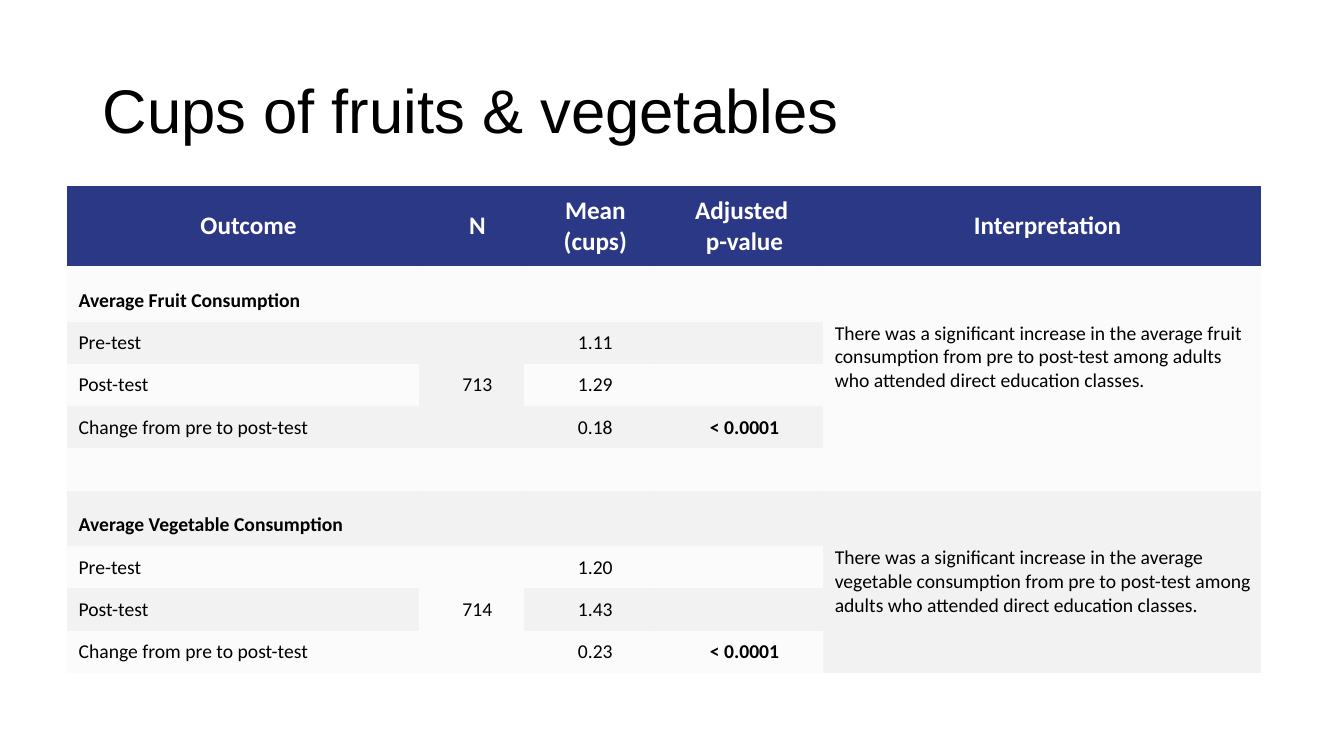
from pptx import Presentation
from pptx import util as u
from pptx.dml.color import RGBColor
from pptx.enum import text
from pptx.oxml import ns
from lxml import etree

BLACK = RGBColor(0, 0, 0)
WHITE = RGBColor(255, 255, 255)
NAVY = RGBColor(0x2B, 0x38, 0x85)
GREY = RGBColor(0xF2, 0xF2, 0xF2)
PALE_ALPHA = "30000"
NO_GRID_STYLE = "{2D5ABB26-0587-4C30-8999-92F81FD0307C}"

LEFT, CENTER = text.PP_ALIGN.LEFT, text.PP_ALIGN.CENTER
MIDDLE, BOTTOM = text.MSO_ANCHOR.MIDDLE, text.MSO_ANCHOR.BOTTOM

HEADINGS = ["Outcome", "N", "Mean (cups)", "Adjusted \np-value", "Interpretation"]
COLUMN_WIDTHS = [3.5, 1.04, 1.3, 1.66, 4.35]
HEADER_HEIGHT, SECTION_HEIGHT, ROW_HEIGHT = 0.79, 0.55, 0.42
ROW_HEIGHTS = [HEADER_HEIGHT, SECTION_HEIGHT] + [ROW_HEIGHT] * 4 + [SECTION_HEIGHT] + [ROW_HEIGHT] * 3
MEASURES = ["Pre-test", "Post-test", "Change from pre to post-test"]
SECTIONS = [
    (1, "Average Fruit Consumption", "713", ["1.11", "1.29", "0.18"],
     "There was a significant increase in the average fruit consumption "
     "from pre to post-test among adults who attended direct education classes."),
    (6, "Average Vegetable Consumption", "714", ["1.20", "1.43", "0.23"],
     "There was a significant increase in the average vegetable consumption "
     "from pre to post-test among adults who attended direct education classes."),
]


def add_run(paragraph, words, font_name, size, color, bold=False):
    """Append one formatted run to a paragraph."""
    run = paragraph.add_run()
    run.text = words
    run.font.name = font_name
    run.font.size = u.Pt(size)
    run.font.color.rgb = color
    run.font.bold = bold


def write_cell(cell, words, align=CENTER, anchor=BOTTOM, size=14, color=BLACK, bold=False):
    """Write a cell's lines, one paragraph each."""
    cell.margin_left, cell.margin_right = u.Inches(0.12), u.Inches(0.01)
    cell.margin_top = cell.margin_bottom = u.Inches(0.09)
    cell.vertical_anchor = anchor
    for index, line in enumerate(words.split("\n")):
        frame = cell.text_frame
        paragraph = frame.add_paragraph() if index else frame.paragraphs[0]
        paragraph.alignment = align
        add_run(paragraph, line, "Calibri", size, color, bold)


def fill_cell(cell, row):
    """Colour a cell by its row: navy header, then pale and grey in turn."""
    cell.fill.solid()
    cell.fill.fore_color.rgb = GREY if row else NAVY
    if row % 2:
        for color in cell.fill._xPr.iter(ns.qn("a:srgbClr")):
            etree.SubElement(color, ns.qn("a:alpha"), val=PALE_ALPHA)


def add_title(slide, left, top, width, height):
    """Place the slide title in its box."""
    title = slide.shapes.add_textbox(*map(u.Inches, (left, top, width, height))).text_frame
    title.word_wrap = True
    title.vertical_anchor = MIDDLE
    heading = title.paragraphs[0]
    heading.line_spacing = 0.9
    add_run(heading, "Cups of fruits & vegetables", "Arial", 44, BLACK)


def write_section(table, first, name, count, means, interpretation):
    """Write one food group's four rows, starting at row first."""
    last = first + len(MEASURES)
    write_cell(table.cell(first, 0), name, LEFT, bold=True)
    for row, (measure, mean) in enumerate(zip(MEASURES, means), first + 1):
        write_cell(table.cell(row, 0), measure, LEFT)
        write_cell(table.cell(row, 2), mean)
    write_cell(table.cell(last, 3), "< 0.0001", bold=True)
    table.cell(first + 1, 1).merge(table.cell(last, 1))
    write_cell(table.cell(first + 1, 1), count, anchor=MIDDLE)
    table.cell(first, 4).merge(table.cell(last, 4))
    write_cell(table.cell(first, 4), interpretation, LEFT, MIDDLE)


def add_results(slide, left, top):
    """Place the results table with its top left corner at the given point."""
    box = map(u.Inches, (left, top, sum(COLUMN_WIDTHS), sum(ROW_HEIGHTS)))
    results = slide.shapes.add_table(len(ROW_HEIGHTS), len(COLUMN_WIDTHS), *box)
    for style in results.element.iter(ns.qn("a:tableStyleId")):
        style.text = NO_GRID_STYLE
    table = results.table
    for column, width in zip(table.columns, COLUMN_WIDTHS):
        column.width = u.Inches(width)
    for index, (row, height) in enumerate(zip(table.rows, ROW_HEIGHTS)):
        row.height = u.Inches(height)
        for cell in row.cells:
            fill_cell(cell, index)
    for column, heading in enumerate(HEADINGS):
        write_cell(table.cell(0, column), heading, anchor=MIDDLE, size=18, color=WHITE, bold=True)
    for section in SECTIONS:
        write_section(table, *section)


def main():
    """Build the slide and save it."""
    deck = Presentation()
    deck.slide_width, deck.slide_height = u.Inches(13.33), u.Inches(7.5)
    slide = deck.slides.add_slide(deck.slide_layouts[6])
    add_title(slide, 0.92, 0.4, 11.5, 1.45)
    add_results(slide, 0.66, 1.85)
    deck.save("out.pptx")


if __name__ == "__main__":
    main()
